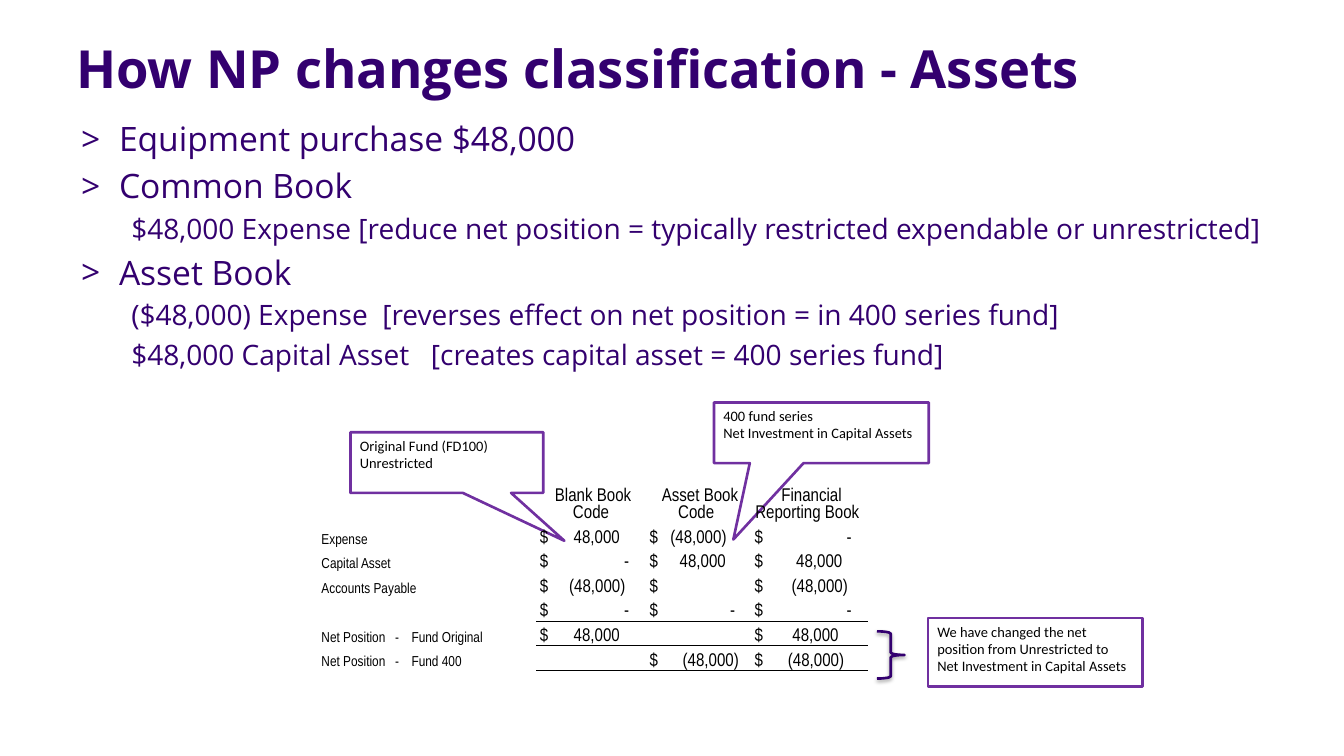
import pptx
import pptx.dml.color
import pptx.enum.shapes
import pptx.enum.text
import pptx.oxml
import pptx.oxml.ns
import pptx.util
from lxml import etree
from pptx.util import Cm, Pt

COLORS = {"title": "33006F", "frame": "7030A0", "ink": "000000"}
NO_STYLE = "{2D5ABB26-0587-4C30-8999-92F81FD0307C}"
SHAPES = pptx.enum.shapes.MSO_SHAPE
ALIGN = pptx.enum.text.PP_ALIGN
ANCHOR = pptx.enum.text.MSO_ANCHOR

BODY = [
    (0, "Equipment purchase $48,000"),
    (0, "Common Book"),
    (1, "$48,000 Expense [reduce net position = typically restricted expendable or unrestricted]"),
    (0, "Asset Book"),
    (1, "($48,000) Expense  [reverses effect on net position = in 400 series fund]"),
    (1, "$48,000 Capital Asset   [creates capital asset = 400 series fund]"),
]
HEADER = ["", " Blank Book Code", " Asset Book Code ", " Financial Reporting Book "]
LEDGER = [
    ["Expense", "$\t48,000", "$\t(48,000)", "$\t-"],
    ["Capital Asset", "$\t-", "$\t48,000", "$\t48,000"],
    ["Accounts Payable", "$\t(48,000)", "$", "$\t(48,000)"],
    ["", "$\t-", "$\t-", "$\t-"],
    ["Net Position\t-\tFund Original", "$\t48,000", "", "$\t48,000"],
    ["Net Position\t-\tFund 400", "", "$\t(48,000)", "$\t(48,000)"],
]
COL_WIDTHS = [5.77, 2.95, 2.82, 3.15]
AMOUNT_TABS = [2.15, 2.05, 2.36]
TAB_SHIFT = {")": 0.15, "-": 0.25}
CELL_SHIFT = {(1, 2): -0.13, (5, 3): -0.1, (6, 2): 0.2, (6, 3): -0.1}
FIRST_RULED_ROW = 4


def rgb(name):
    return pptx.dml.color.RGBColor.from_string(COLORS[name])


def sub(parent, tag, **attrs):
    """Append an XML child such as a:tab."""
    return etree.SubElement(parent, pptx.oxml.ns.qn(tag),
                            {k: str(v) for k, v in attrs.items()})


def write(p, text, size, font="Calibri", color="ink", bold=False, align=None,
          before=None, line=None, level=0, indent=None, bullet=None, tabs=()):
    """Fill one paragraph; tabs holds (position in cm, alignment) pairs."""
    p.level = level
    if align is not None:
        p.alignment = align
    if before is not None:
        p.space_before = Pt(before)
    if line is not None:
        p.line_spacing = line
    pPr = p._p.get_or_add_pPr()
    if indent:
        pPr.set("marL", str(Cm(indent[0])))
        pPr.set("indent", str(Cm(indent[1])))
    if bullet:
        sub(pPr, "a:buFont", typeface=font)
        sub(pPr, "a:buChar", char=bullet)
    if tabs:
        tab_list = sub(pPr, "a:tabLst")
        for pos, kind in tabs:
            sub(tab_list, "a:tab", pos=Cm(pos), algn=kind)
    if not text:
        sub(p._p, "a:endParaRPr", sz=size * 100)
        return
    r = p.add_run()
    r.text = text
    r.font.name, r.font.size, r.font.bold = font, Pt(size), bold
    r.font.color.rgb = rgb(color)


def add_text_box(s, x, y, w, h, top):
    tf = s.shapes.add_textbox(Cm(x), Cm(y), Cm(w), Cm(h)).text_frame
    tf.word_wrap = True
    tf.margin_top = Cm(top)
    return tf


def add_body(s):
    tf = add_text_box(s, 1.93, 3.05, 32.4, 7, top=0.13)
    for i, (level, text) in enumerate(BODY):
        p = tf.add_paragraph() if i else tf.paragraphs[0]
        before = 0 if i == 0 else (5.1, 4.3)[level]
        write(p, text, (25.6, 21.4)[level], "Open Sans", "title", before=before,
              level=level, indent=((1.02, -1.02), (1.35, 0))[level],
              bullet=(">", None)[level])


def add_outline(s, kind, x, y, w, h, color="frame"):
    sp = s.shapes.add_shape(kind, Cm(x), Cm(y), Cm(w), Cm(h))
    sp.shadow.inherit = False
    sp.fill.background()
    sp.line.color.rgb = rgb(color)
    sp.line.width = Pt(2)
    return sp


def add_note(s, kind, x, y, w, h, lines, pointer=()):
    """Framed remark; pointer gives the callout tip relative to the frame."""
    sp = add_outline(s, kind, x, y, w, h)
    for i, value in enumerate(pointer):
        sp.adjustments[i] = value
    tf = sp.text_frame
    tf.word_wrap = True
    tf.vertical_anchor = ANCHOR.TOP
    for i, text in enumerate(lines):
        p = tf.add_paragraph() if i else tf.paragraphs[0]
        write(p, text, 11, align=ALIGN.LEFT)


def add_brace(s):
    sp = add_outline(s, SHAPES.RIGHT_BRACE, 23.57, 16.97, 0.74, 1.27, "title")
    effects = sp.element.spPr.find(pptx.oxml.ns.qn("a:effectLst"))
    shadow = sub(effects, "a:outerShdw", blurRad=Pt(3.1), dist=Pt(1.6),
                 dir=90 * 60000, rotWithShape=0)
    sub(sub(shadow, "a:srgbClr", val=COLORS["ink"]), "a:alpha", val=38000)


def add_rule(cell, side):
    ln = sub(cell._tc.get_or_add_tcPr(), side, w=Pt(0.5))
    sub(sub(ln, "a:solidFill"), "a:srgbClr", val=COLORS["ink"])


def fill_cell(cell, text, row, col):
    cell.margin_top = cell.margin_bottom = cell.margin_right = 0
    cell.margin_left = Cm(0.1) if row and col else 0
    cell.vertical_anchor = ANCHOR.BOTTOM
    if col and row > FIRST_RULED_ROW:
        add_rule(cell, "a:lnT")
    if col and row >= FIRST_RULED_ROW:
        add_rule(cell, "a:lnB")
    cell.fill.background()
    tabs = []
    if "\t" in text:
        if col:
            shift = TAB_SHIFT.get(text[-1], 0) + CELL_SHIFT.get((row, col), 0)
            tabs = [(AMOUNT_TABS[col - 1] + shift, "r")]
        else:
            tabs = [(1.98, "l"), (2.42, "l")]
    write(cell.text_frame.paragraphs[0], text, 14 if col else 11, "Arial Narrow",
          align=ALIGN.LEFT if row else ALIGN.CENTER, tabs=tabs)


def add_ledger(s):
    rows = [HEADER] + LEDGER
    frame = s.shapes.add_table(len(rows), len(HEADER), Cm(8.64), Cm(12.86),
                               Cm(sum(COL_WIDTHS)), Cm(4.86))
    table = frame.table
    table.first_row = table.horz_banding = False
    next(frame.element.iter(pptx.oxml.ns.qn("a:tableStyleId"))).text = NO_STYLE
    for column, width in zip(table.columns, COL_WIDTHS):
        column.width = Cm(width)
    for i, texts in enumerate(rows):
        table.rows[i].height = Cm(0.66 if i else 0.9)
        for j, text in enumerate(texts):
            fill_cell(table.cell(i, j), text, i, j)


def main():
    prs = pptx.Presentation()
    prs.slide_width, prs.slide_height = Cm(36.12), Cm(20.32)
    s = prs.slides.add_slide(prs.slide_layouts[6])
    tf = add_text_box(s, 1.8, 1.02, 33, 1.32, top=0.13)
    write(tf.paragraphs[0], "How NP changes classification - Assets", 40,
          "Open Sans", "title", bold=True, line=0.9)
    add_body(s)
    add_note(s, SHAPES.RECTANGULAR_CALLOUT, 9.42, 11.62, 5.18, 1.63,
             ["Original Fund (FD100)", "Unrestricted"], (0.61, 1.29))
    add_note(s, SHAPES.RECTANGULAR_CALLOUT, 19.19, 10.82, 5.77, 1.63,
             ["400 fund series", "Net Investment in Capital Assets"], (-0.41, 1.76))
    add_ledger(s)
    add_brace(s)
    add_note(s, SHAPES.RECTANGLE, 24.94, 16.61, 5.77, 1.85,
             ["We have changed the net position from Unrestricted to "
              "Net Investment in Capital Assets"])
    prs.save("out.pptx")


if __name__ == "__main__":
    main()
